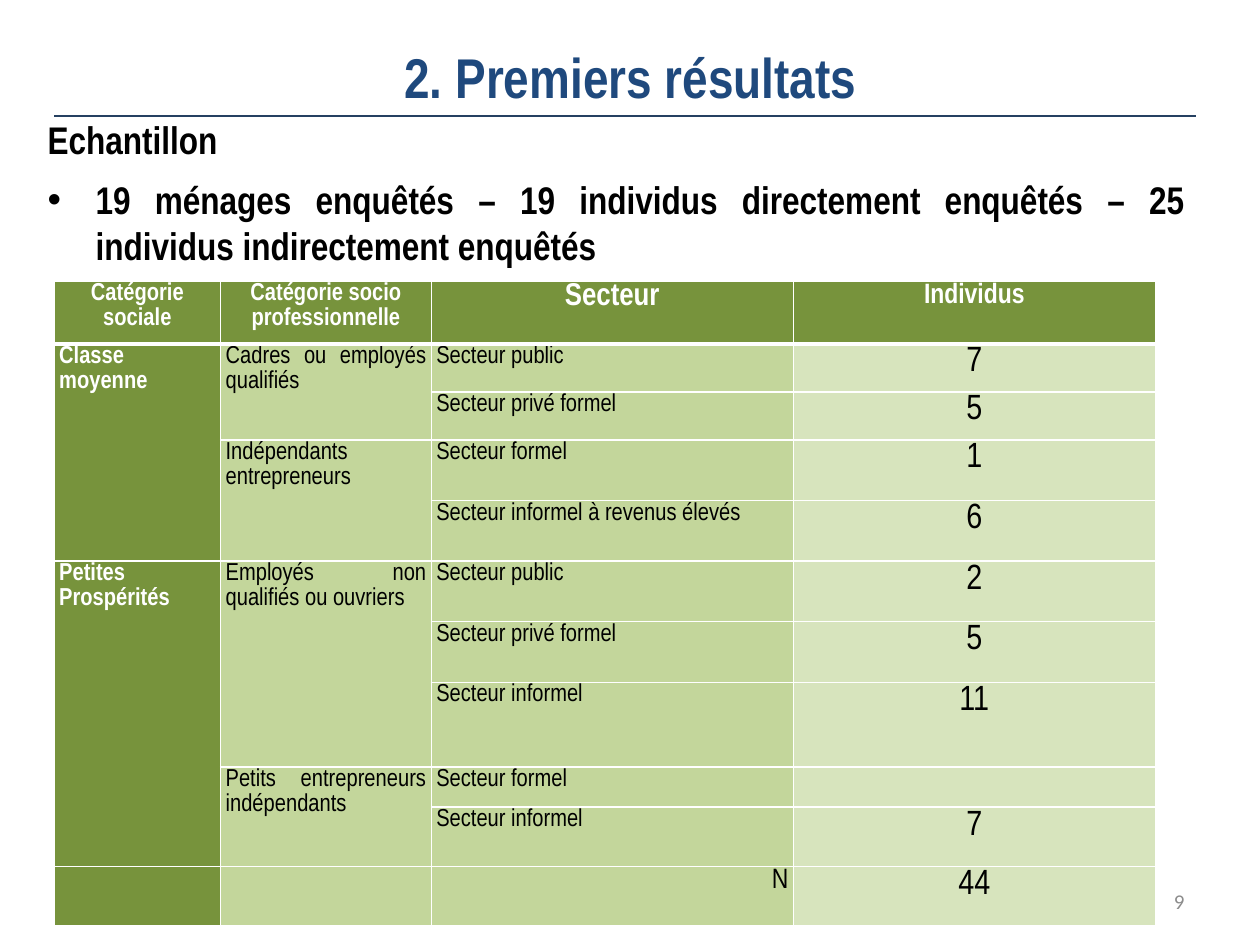
from dataclasses import dataclass

from lxml.etree import SubElement
from pptx import Presentation
from pptx.dml.color import RGBColor
from pptx.enum.shapes import MSO_CONNECTOR
from pptx.enum.text import MSO_ANCHOR, PP_ALIGN
from pptx.oxml.ns import qn
from pptx.util import Inches, Pt

COLUMNS, ROWS = 100, 75
SLIDE_WIDTH, SLIDE_HEIGHT = Inches(10), Inches(7.5)


@dataclass(frozen=True)
class Theme:
    narrow: str = "Arial Narrow"
    plain: str = "Calibri"
    navy: str = "1F497D"
    rule: str = "254061"
    black: str = "000000"
    white: str = "FFFFFF"
    grey: str = "8C8C8C"
    dark_green: str = "77933C"
    mid_green: str = "C3D69B"
    pale_green: str = "D7E4BD"
    title: int = 32
    body: int = 22
    count: int = 20
    sector_head: int = 18
    total: int = 16
    label: int = 14
    number: int = 12
    cell_spacing: float = 1.07


@dataclass(frozen=True)
class Box:
    column: float
    row: float
    columns: float
    rows: float

    def place(self):
        return (across(self.column), down(self.row),
                across(self.columns), down(self.rows))


THEME = Theme()

TABLE_COLUMNS = (13.2, 16.7, 28.7, 28.7)
TABLE_ROWS = (5, 3.8, 3.8, 4.8, 4.8, 4.8, 4.8, 6.7, 3.2, 4.7, 4.7)
HEADINGS = (
    ("Catégorie sociale", THEME.label),
    ("Catégorie socio\nprofessionnelle", THEME.label),
    ("Secteur", THEME.sector_head),
    ("Individus", THEME.total),
)
SAMPLE = (
    ("Classe moyenne", (
        ("Cadres ou employés qualifiés",
         (("Secteur public", "7"), ("Secteur privé formel", "5"))),
        ("Indépendants entrepreneurs",
         (("Secteur formel", "1"), ("Secteur informel à revenus élevés", "6"))),
    )),
    ("Petites Prospérités", (
        ("Employés non qualifiés ou ouvriers",
         (("Secteur public", "2"), ("Secteur privé formel", "5"),
          ("Secteur informel", "11"))),
        ("Petits entrepreneurs indépendants",
         (("Secteur formel", ""), ("Secteur informel", "7"))),
    )),
)


def across(columns):
    return round(SLIDE_WIDTH * columns / COLUMNS)


def down(rows):
    return round(SLIDE_HEIGHT * rows / ROWS)


def write(paragraph, text, size, color, align, bold=False, font=THEME.narrow):
    paragraph.alignment = align
    for index, line in enumerate(text.split("\n")):
        if index:
            paragraph.add_line_break()
        run = paragraph.add_run()
        run.text = line
        run.font.name = font
        run.font.size = Pt(size)
        run.font.bold = bold
        run.font.color.rgb = RGBColor.from_string(color)


def text_frame(slide, box, anchor=MSO_ANCHOR.TOP):
    frame = slide.shapes.add_textbox(*box.place()).text_frame
    frame.word_wrap = True
    frame.vertical_anchor = anchor
    return frame


def add_title(slide, box):
    frame = text_frame(slide, box, MSO_ANCHOR.MIDDLE)
    write(frame.paragraphs[0], "2. Premiers résultats", THEME.title,
          THEME.navy, PP_ALIGN.CENTER, bold=True)


def add_rule(slide, box):
    left, top, width, height = box.place()
    rule = slide.shapes.add_connector(
        MSO_CONNECTOR.STRAIGHT, left, top, left + width, top + height)
    rule.line.color.rgb = RGBColor.from_string(THEME.rule)
    rule.line.width = Pt(0.75)
    SubElement(rule._element.spPr, qn("a:effectLst"))


def add_summary(slide, box):
    frame = text_frame(slide, box)
    heading, finding = frame.paragraphs[0], frame.add_paragraph()
    texts = (
        (heading, "Echantillon"),
        (finding, "19 ménages enquêtés – 19 individus directement enquêtés"
                  " – 25 individus indirectement enquêtés"),
    )
    for paragraph, text in texts:
        paragraph.space_before, paragraph.space_after = Pt(2), Pt(6)
        write(paragraph, text, THEME.body, THEME.black, PP_ALIGN.JUSTIFY, bold=True)
    properties = finding._p.get_or_add_pPr()
    indent = across(3.8)
    properties.set("marL", str(indent))
    properties.set("indent", str(-indent))
    SubElement(properties, qn("a:buFont"), typeface="Arial")
    SubElement(properties, qn("a:buChar"), char="•")


def style_cell(cell, fill, bottom):
    cell.margin_left = cell.margin_right = across(0.4)
    cell.margin_top = cell.margin_bottom = 0
    properties = cell._tc.get_or_add_tcPr()
    for side, width in (("L", 1), ("R", 1), ("T", 1), ("B", bottom)):
        border = SubElement(properties, qn(f"a:ln{side}"), w=str(Pt(width)))
        paint = SubElement(border, qn("a:solidFill"))
        SubElement(paint, qn("a:srgbClr"), val=THEME.white)
    cell.fill.solid()
    cell.fill.fore_color.rgb = RGBColor.from_string(fill)
    cell.text_frame.paragraphs[0].font.size = Pt(THEME.label)


def fill_cell(cell, text, size=THEME.label, color=THEME.black,
              align=PP_ALIGN.JUSTIFY, bold=False):
    if text:
        paragraph = cell.text_frame.paragraphs[0]
        paragraph.line_spacing = THEME.cell_spacing
        write(paragraph, text, size, color, align, bold)


def add_sample_table(slide, box):
    table = slide.shapes.add_table(
        len(TABLE_ROWS), len(TABLE_COLUMNS), *box.place()).table
    for column, share in zip(table.columns, TABLE_COLUMNS):
        column.width = across(box.columns * share / sum(TABLE_COLUMNS))
    for row, share in zip(table.rows, TABLE_ROWS):
        row.height = down(box.rows * share / sum(TABLE_ROWS))

    body_fills = (THEME.dark_green, THEME.mid_green, THEME.mid_green, THEME.pale_green)
    for row in range(len(TABLE_ROWS)):
        for column, fill in enumerate(body_fills):
            style_cell(table.cell(row, column),
                       fill if row else THEME.dark_green, 1 if row else 3)

    for column, (heading, size) in enumerate(HEADINGS):
        fill_cell(table.cell(0, column), heading, size, THEME.white,
                  PP_ALIGN.CENTER, bold=True)

    row = 1
    for social_class, occupations in SAMPLE:
        class_row = row
        for occupation, sectors in occupations:
            occupation_row = row
            for sector, count in sectors:
                fill_cell(table.cell(row, 2), sector)
                fill_cell(table.cell(row, 3), count, THEME.count, align=PP_ALIGN.CENTER)
                row += 1
            fill_cell(table.cell(occupation_row, 1), occupation)
            table.cell(occupation_row, 1).merge(table.cell(row - 1, 1))
        fill_cell(table.cell(class_row, 0), social_class, color=THEME.white, bold=True)
        table.cell(class_row, 0).merge(table.cell(row - 1, 0))

    fill_cell(table.cell(row, 2), "N", THEME.total, align=PP_ALIGN.RIGHT)
    fill_cell(table.cell(row, 3), "44", THEME.count, align=PP_ALIGN.CENTER)


def add_page_number(slide, box):
    frame = text_frame(slide, box, MSO_ANCHOR.MIDDLE)
    write(frame.paragraphs[0], "9", THEME.number, THEME.grey,
          PP_ALIGN.RIGHT, font=THEME.plain)


def main():
    presentation = Presentation()
    presentation.slide_width, presentation.slide_height = SLIDE_WIDTH, SLIDE_HEIGHT
    slide = presentation.slides.add_slide(presentation.slide_layouts[6])
    add_title(slide, Box(5.1, 3, 89.9, 6.1))
    add_summary(slide, Box(2.8, 8.7, 92.2, 60.6))
    add_rule(slide, Box(4.3, 9.2, 90.6, 0))
    add_page_number(slide, Box(71.7, 69.5, 23.3, 4))
    add_sample_table(slide, Box(4.3, 22.3, 87.4, 51.2))
    presentation.save("out.pptx")


if __name__ == "__main__":
    main()
